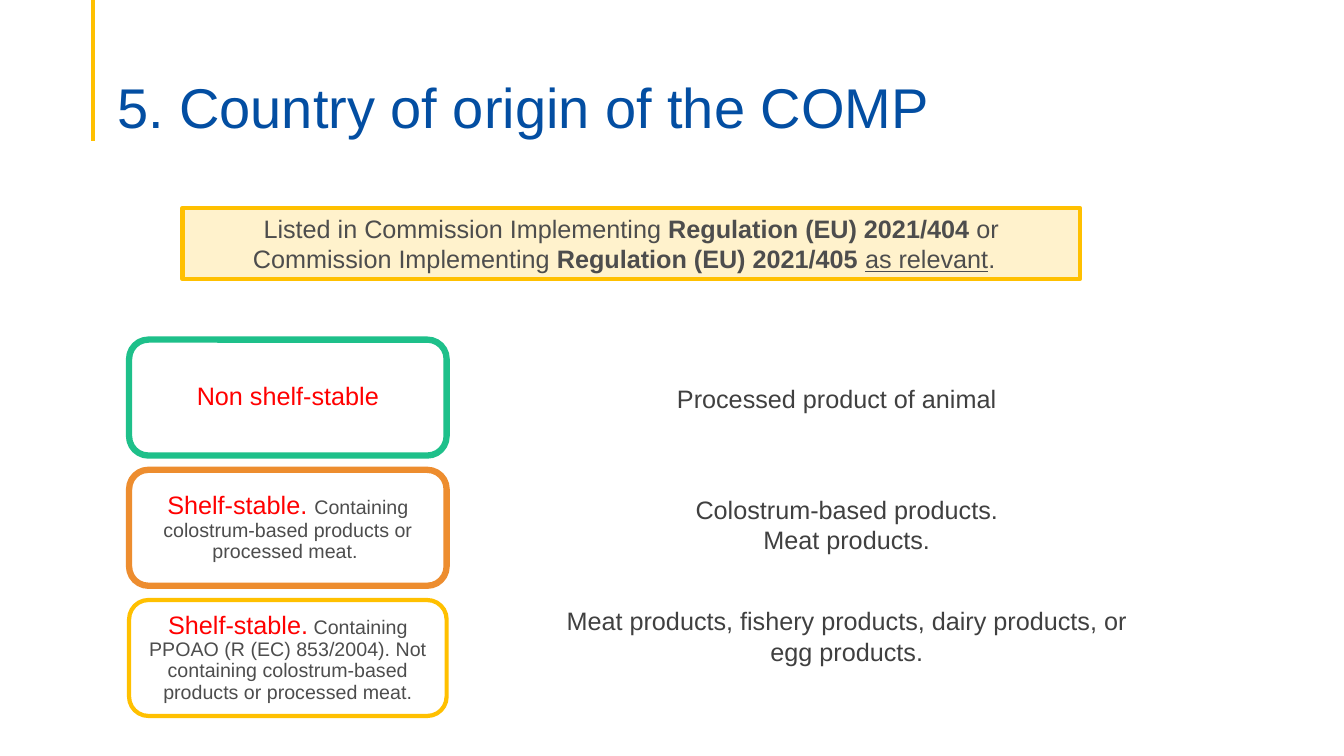
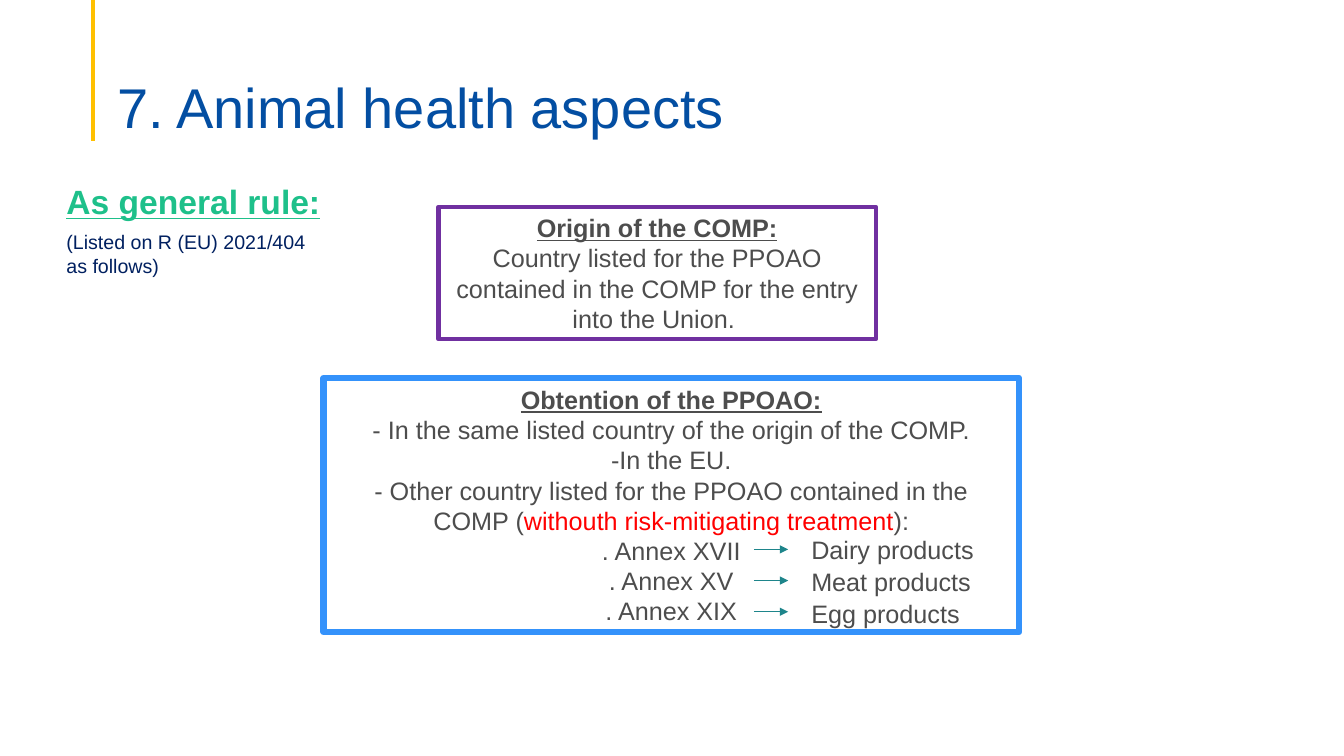
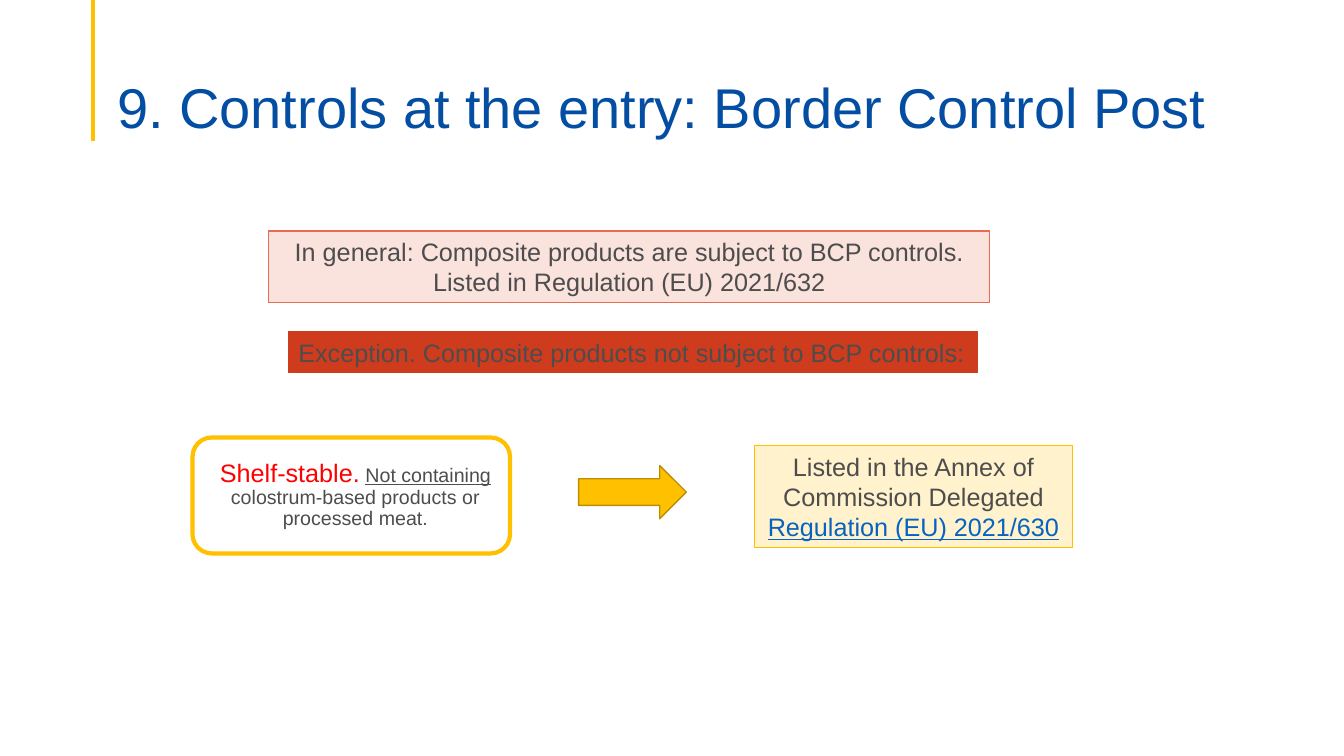
from lxml import etree
from pptx import Presentation
from pptx.dml.color import RGBColor
from pptx.enum.shapes import MSO_CONNECTOR, MSO_SHAPE
from pptx.enum.text import MSO_ANCHOR, MSO_AUTO_SIZE, PP_ALIGN
from pptx.oxml.ns import qn
from pptx.util import Pt

RECT, ROUND = MSO_SHAPE.RECTANGLE, MSO_SHAPE.ROUNDED_RECTANGLE
ARROW = MSO_SHAPE.RIGHT_ARROW
STRAIGHT = MSO_CONNECTOR.STRAIGHT
LEFT, CENTER = PP_ALIGN.LEFT, PP_ALIGN.CENTER
TOP, MIDDLE, BOTTOM = MSO_ANCHOR.TOP, MSO_ANCHOR.MIDDLE, MSO_ANCHOR.BOTTOM

WHITE = RGBColor(0xFF, 0xFF, 0xFF)
TITLE_BLUE = RGBColor(0x03, 0x4E, 0xA2)
NAVY = RGBColor(0x00, 0x20, 0x60)
LINK_BLUE = RGBColor(0x05, 0x63, 0xC1)
BRIGHT_BLUE = RGBColor(0x34, 0x92, 0xFB)
TEAL = RGBColor(0x1E, 0x85, 0x8B)
GREEN = RGBColor(0x1E, 0xC0, 0x8A)
ORANGE = RGBColor(0xED, 0x8D, 0x2F)
GOLD = RGBColor(0xFF, 0xC0, 0x00)
DARK_GOLD = RGBColor(0xBD, 0x8E, 0x00)
CREAM = RGBColor(0xFF, 0xF2, 0xCC)
PURPLE = RGBColor(0x70, 0x30, 0xA0)
PINK = RGBColor(0xFA, 0xE2, 0xDD)
CORAL = RGBColor(0xE7, 0x6C, 0x53)
BRICK = RGBColor(0xCF, 0x3B, 0x1D)
RED = RGBColor(0xFF, 0x00, 0x00)
GREY = RGBColor(0x4D, 0x4D, 0x4D)
DARK_GREY = RGBColor(0x40, 0x40, 0x40)

# Character formats, each laid over BODY
BODY = {"name": "Arial", "size": Pt(18), "color": GREY}
TITLE = {"size": Pt(40), "color": TITLE_BLUE}
PLAIN = {}
BOLD = {"bold": True}
UNDER = {"underline": True}
HEAD = {"bold": True, "underline": True}
ALERT = {"color": RED}
SMALL = {"size": Pt(14)}
SMALL_UNDER = {"size": Pt(14), "underline": True}
DARK = {"color": DARK_GREY}
RULE = {"size": Pt(24), "color": GREEN, "bold": True, "underline": True}
NOTE = {"size": Pt(14), "color": NAVY}
LINK = {"color": LINK_BLUE, "underline": True}

# Geometry and paragraph rules of the rounded cards
CARD_W, CARD_H = 226.8, 82.8
CARD = {"fill": WHITE, "insets": (5, 5, 5, 5), "spacing": 0.9}

prs = Presentation()
prs.slide_width, prs.slide_height = Pt(960), Pt(540)


def add_box(s, kind, rect, paras, fill=None, line=None, align=CENTER,
            anchor=MIDDLE, insets=(7.2, 3.6, 7.2, 3.6), spacing=1.0):
    """Put formatted paragraphs in a preset shape, text box or placeholder."""
    rect = [Pt(v) for v in rect]
    if kind == "title":
        sp = s.shapes.title
        sp.left, sp.top, sp.width, sp.height = rect
    elif kind == "text":
        sp = s.shapes.add_textbox(*rect)
    else:
        sp = s.shapes.add_shape(kind, *rect)
        sp.shadow.inherit = False
        if fill is None:
            sp.fill.background()
        else:
            sp.fill.solid()
            sp.fill.fore_color.rgb = fill
        sp.line.color.rgb, sp.line.width = line[0], Pt(line[1])
    tf = sp.text_frame
    tf.word_wrap, tf.auto_size = True, MSO_AUTO_SIZE.NONE
    tf.vertical_anchor = anchor
    for side, inset in zip(("left", "top", "right", "bottom"), insets):
        setattr(tf, f"margin_{side}", Pt(inset))
    for i, runs in enumerate(paras):
        p = tf.add_paragraph() if i else tf.paragraphs[0]
        p.alignment, p.line_spacing = align, spacing
        for text, style in runs:
            r = p.add_run()
            r.text = text
            for name, value in {**BODY, **style}.items():
                if name == "color":
                    r.font.color.rgb = value
                else:
                    setattr(r.font, name, value)
    return sp


def add_line(s, x1, y1, x2, y2, color, width):
    c = s.shapes.add_connector(STRAIGHT, Pt(x1), Pt(y1), Pt(x2), Pt(y2))
    c.line.color.rgb, c.line.width = color, Pt(width)
    etree.SubElement(c.element.spPr, qn("a:effectLst"))
    return c


# Slides with the shared gold rule and title
slides = []
for title in ("5. Country of origin of the COMP", "7. Animal health aspects",
              "9. Controls at the entry: Border Control Post"):
    s = prs.slides.add_slide(prs.slide_layouts[5])
    add_line(s, 66.5, 0, 66.5, 101, GOLD, 2.25)
    add_box(s, "title", (76.5, 38.5, 828, 62), [[(title, TITLE)]], align=LEFT,
            anchor=BOTTOM, insets=(7.2, 3.6, 7.2, 0), spacing=0.9)
    slides.append(s)
origin, health, controls = slides

# Slide 1: listing rule
add_box(origin, RECT, (130.3, 148.5, 641, 51), [[
    ("Listed in Commission Implementing ", PLAIN),
    ("Regulation (EU) 2021/404 ", BOLD),
    ("or Commission Implementing ", PLAIN),
    ("Regulation (EU) 2021/405 ", BOLD),
    ("as relevant", UNDER), (".  ", PLAIN)]], CREAM, (GOLD, 3))

# Slide 1: product categories
cards = [
    ((GREEN, 4.5), [("Non shelf-stable", ALERT)]),
    ((ORANGE, 4.5), [
        ("Shelf-stable. ", ALERT),
        ("Containing colostrum-based products or processed meat. ", SMALL)]),
    ((GOLD, 3), [
        ("Shelf-stable.", ALERT),
        (" Containing PPOAO (R (EC) 853/2004). Not containing "
         "colostrum-based products or processed meat.", SMALL)]),
]
for i, (line, runs) in enumerate(cards):
    add_box(origin, ROUND, (92.2, 242.6 + 93 * i, CARD_W, CARD_H), [runs],
            line=line, **CARD)

# Slide 1: products of each category
products = [
    (387.4, 270, 29, ["Processed product of animal"]),
    (394.6, 349.2, 51, ["Colostrum-based products.", "Meat products."]),
    (394.6, 429.1, 51, ["Meat products, fishery products, dairy products, "
                        "or egg products."]),
]
for x, y, h, lines in products:
    add_box(origin, "text", (x, y, 420.5, h),
            [[(text, DARK)] for text in lines], anchor=TOP)

# Slide 2: general rule
tf = add_box(health, "text", (40.3, 126, 202.3, 76.3), [
    [("As general rule:", RULE)],
    [("(Listed on R (EU) 2021/404 as follows)", NOTE)]],
    align=LEFT, anchor=TOP).text_frame
tf.paragraphs[1].space_before = Pt(6)

# Slide 2: conditions on origin and obtention
add_box(health, RECT, (313.2, 147.8, 312.5, 94.5), [
    [("Origin of the COMP:", HEAD)],
    [("Country listed for the PPOAO contained in the COMP for the entry "
      "into the Union. ", PLAIN)]], line=(PURPLE, 3))
add_box(health, RECT, (231.1, 270, 496.8, 181.5), [
    [("Obtention of the PPOAO:", HEAD)],
    [("- In the same listed country of the origin of the COMP.", PLAIN)],
    [("-In the EU.", PLAIN)],
    [("- Other country listed for the PPOAO contained in the COMP (", PLAIN),
     ("withouth risk-mitigating treatment", ALERT), ("):", PLAIN)],
    [(". Annex XVII", PLAIN)],
    [(". Annex XV", PLAIN)],
    [(". Annex XIX", PLAIN)]], line=(BRIGHT_BLUE, 4.5))

# Slide 2: arrows from each annex to its products
for i, text in enumerate(("Dairy products", "Meat products", "Egg products")):
    y = 392.4 + 22.3 * i
    c = add_line(health, 538.5, y, 563, y, TEAL, 0.5)
    etree.SubElement(c.element.spPr.find(qn("a:ln")), qn("a:tailEnd"),
                     type="triangle")
    add_box(health, "text", (572.4, 378 + 23 * i, 151, 29),
            [[(text, PLAIN)]], align=LEFT, anchor=TOP)

# Slide 3: general rule and exception
add_box(controls, RECT, (192, 165, 515, 51), [[
    ("In general: Composite products are subject to BCP controls. "
     "Listed in Regulation (EU) 2021/632", PLAIN)]], PINK, (CORAL, 0.75))
add_box(controls, RECT, (206, 237, 492, 29), [[
    ("Exception. Composite products not subject to BCP controls:", PLAIN)]],
    BRICK, (BRICK, 0.75), align=LEFT)

# Slide 3: exempt products and their list
exempt = [("Shelf-stable.", ALERT), (" ", SMALL),
          ("Not containing", SMALL_UNDER),
          (" colostrum-based products or processed meat.", SMALL)]
add_box(controls, ROUND, (137.5, 312.5, CARD_W, CARD_H), [exempt],
        line=(GOLD, 3), **{**CARD, "insets": (8, 5, 2, 5)})
add_box(controls, ARROW, (413.3, 332.5, 77, 38), [], GOLD, (DARK_GOLD, 1))
add_box(controls, RECT, (539, 318.5, 227, 72.5), [[
    ("Listed in the Annex of Commission Delegated ", PLAIN),
    ("Regulation (EU) 2021/630", LINK)]], CREAM, (GOLD, 0.75))

prs.save("out.pptx")
